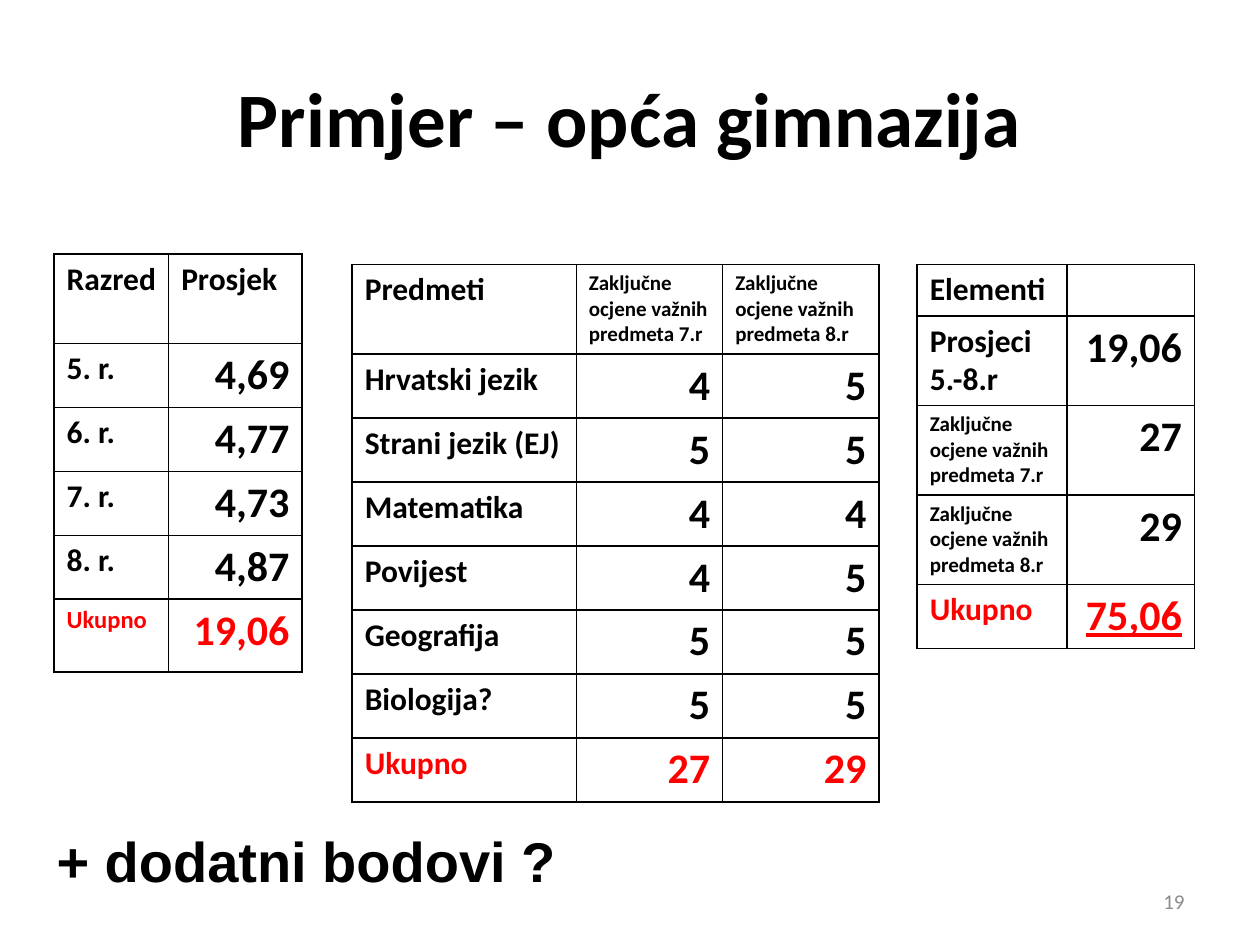
from dataclasses import dataclass

import lxml.etree
import pptx
import pptx.dml.color
import pptx.enum.text
import pptx.oxml.ns
import pptx.util

Cm = pptx.util.Cm
Pt = pptx.util.Pt
Align = pptx.enum.text.PP_ALIGN
Anchor = pptx.enum.text.MSO_ANCHOR

COLORS = {"ink": "000000", "total": "FF0000", "number": "8B8B8B"}
SEVENTH = "Zaključne ocjene važnih predmeta 7.r"
EIGHTH = "Zaključne ocjene važnih predmeta 8.r"
TOTAL = "Ukupno"
TALL_ROW = 1.8
SCORE_ROW = 1.29


@dataclass(frozen=True)
class ScoreTable:
    left: float
    top: float
    widths: list[float]
    heights: list[float]
    rows: list[list[str]]
    total_size: int = 18
    underline_total: bool = False


TABLES = [
    ScoreTable(
        1.09, 5.12, [2.31, 2.69], [TALL_ROW] + [SCORE_ROW] * 4 + [1.47],
        [
            ["Razred", "Prosjek"],
            ["5. r.", "4,69"],
            ["6. r.", "4,77"],
            ["7. r.", "4,73"],
            ["8. r.", "4,87"],
            [TOTAL, "19,06"],
        ],
        total_size=14,
    ),
    ScoreTable(
        7.1, 5.33, [4.52, 2.95, 3.15], [TALL_ROW] + [SCORE_ROW] * 7,
        [
            ["Predmeti", SEVENTH, EIGHTH],
            ["Hrvatski jezik", "4", "5"],
            ["Strani jezik (EJ)", "5", "5"],
            ["Matematika", "4", "4"],
            ["Povijest", "4", "5"],
            ["Geografija", "5", "5"],
            ["Biologija?", "5", "5"],
            [TOTAL, "27", "29"],
        ],
    ),
    ScoreTable(
        18.49, 5.33, [3.02, 2.57], [1.04] + [TALL_ROW] * 3 + [SCORE_ROW],
        [
            ["Elementi", ""],
            ["Prosjeci 5.-8.r", "19,06"],
            [SEVENTH, "27"],
            [EIGHTH, "29"],
            [TOTAL, "75,06"],
        ],
        underline_total=True,
    ),
]


def write_text(frame, text: str, *, size: float, font: str = "Calibri", color: str = "ink",
               bold: bool = True, underline: bool = False, align=Align.LEFT) -> None:
    frame.word_wrap = True
    para = frame.paragraphs[0]
    para.alignment = align
    span = para.add_run()
    span.text = text
    span.font.size = Pt(size)
    span.font.name = font
    span.font.bold = bold
    span.font.underline = underline
    span.font.color.rgb = pptx.dml.color.RGBColor.from_string(COLORS[color])


def place(shape, left: float, top: float, width: float, height: float) -> None:
    shape.left, shape.top, shape.width, shape.height = map(Cm, (left, top, width, height))


def add_borders(cell) -> None:
    qn = pptx.oxml.ns.qn
    properties = cell._tc.get_or_add_tcPr()
    for side in ("a:lnL", "a:lnR", "a:lnT", "a:lnB"):
        line = lxml.etree.SubElement(properties, qn(side), w=str(Pt(0.96)))
        fill = lxml.etree.SubElement(line, qn("a:solidFill"))
        lxml.etree.SubElement(fill, qn("a:srgbClr"), val=COLORS["ink"])


def draw_table(page, spec_table: ScoreTable) -> None:
    frame = page.shapes.add_table(
        len(spec_table.rows), len(spec_table.widths), Cm(spec_table.left), Cm(spec_table.top),
        Cm(sum(spec_table.widths)), Cm(sum(spec_table.heights)))
    table = frame.table
    table.first_row = table.horz_banding = False
    for column, width in zip(table.columns, spec_table.widths):
        column.width = Cm(width)
    for row, height in zip(table.rows, spec_table.heights):
        row.height = Cm(height)
    for row_index, texts in enumerate(spec_table.rows):
        is_total = texts[0] == TOTAL
        for column_index, text in enumerate(texts):
            cell = table.cell(row_index, column_index)
            add_borders(cell)
            cell.fill.background()
            if not text:
                continue
            is_score = row_index > 0 and column_index > 0
            if is_score:
                size = 24
            elif text in (SEVENTH, EIGHTH):
                size = 12
            else:
                size = spec_table.total_size if is_total else 18
            write_text(
                cell.text_frame, text, size=size,
                color="total" if is_total else "ink",
                underline=is_total and is_score and spec_table.underline_total,
                align=Align.RIGHT if is_score else Align.LEFT)


def add_text_box(page, left: float, top: float, width: float, height: float):
    return page.shapes.add_textbox(Cm(left), Cm(top), Cm(width), Cm(height)).text_frame


def main() -> None:
    deck = pptx.Presentation()
    deck.slide_width, deck.slide_height = Cm(25.4), Cm(19.05)
    page = deck.slides.add_slide(deck.slide_layouts[5])

    title = page.shapes.title
    place(title, 1.27, 0.76, 22.86, 3.18)
    title.text_frame.vertical_anchor = Anchor.MIDDLE
    write_text(title.text_frame, "Primjer – opća gimnazija", size=44, align=Align.CENTER)

    for score_table in TABLES:
        draw_table(page, score_table)

    number = add_text_box(page, 18.2, 17.66, 5.93, 1.01)
    number.vertical_anchor = Anchor.MIDDLE
    write_text(number, "19", size=12, color="number", bold=False, align=Align.RIGHT)

    bonus = add_text_box(page, 0.89, 16.53, 13.59, 1.61)
    write_text(bonus, "+ dodatni bodovi ?", size=32, font="Arial")

    deck.save("out.pptx")


if __name__ == "__main__":
    main()
